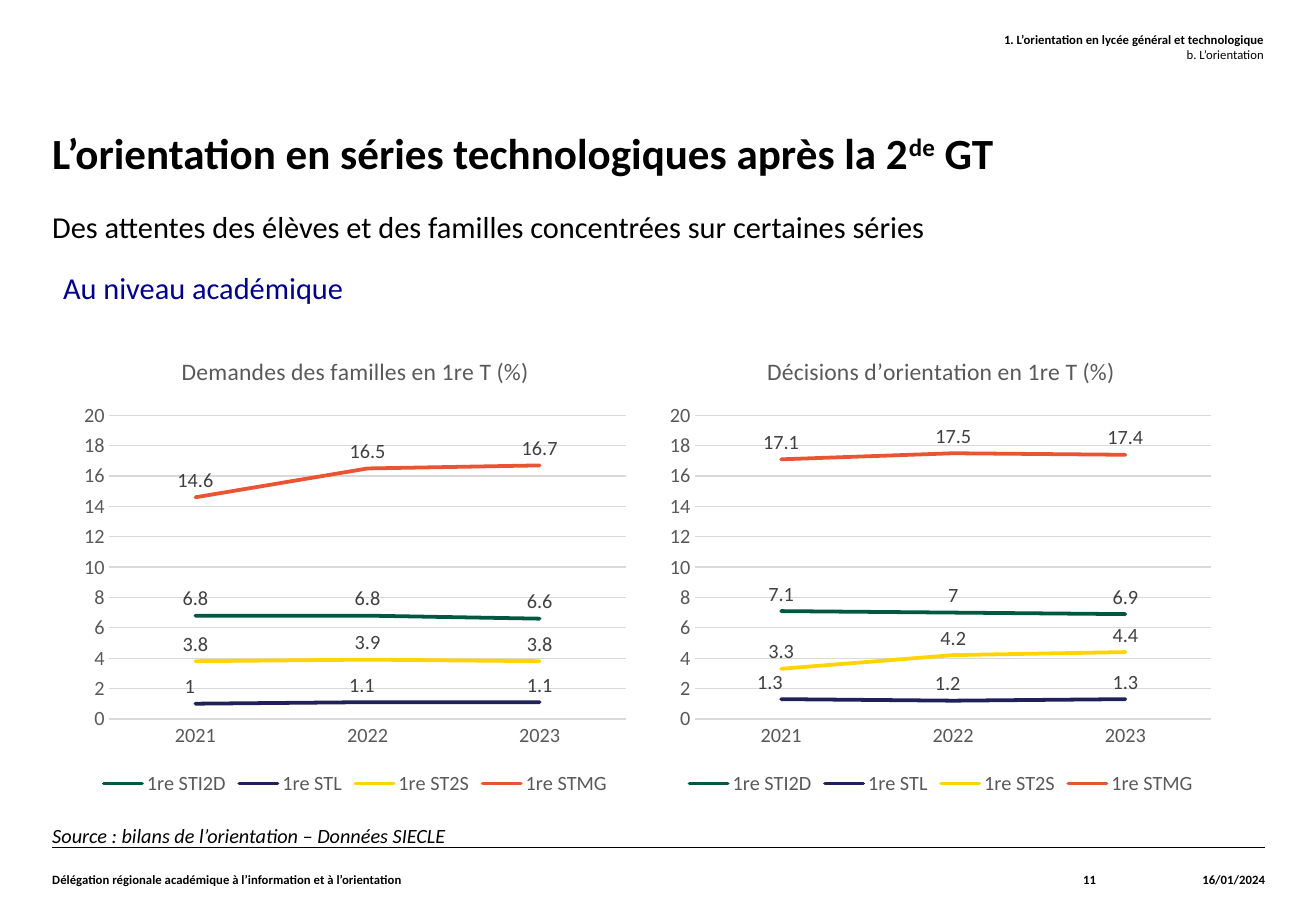
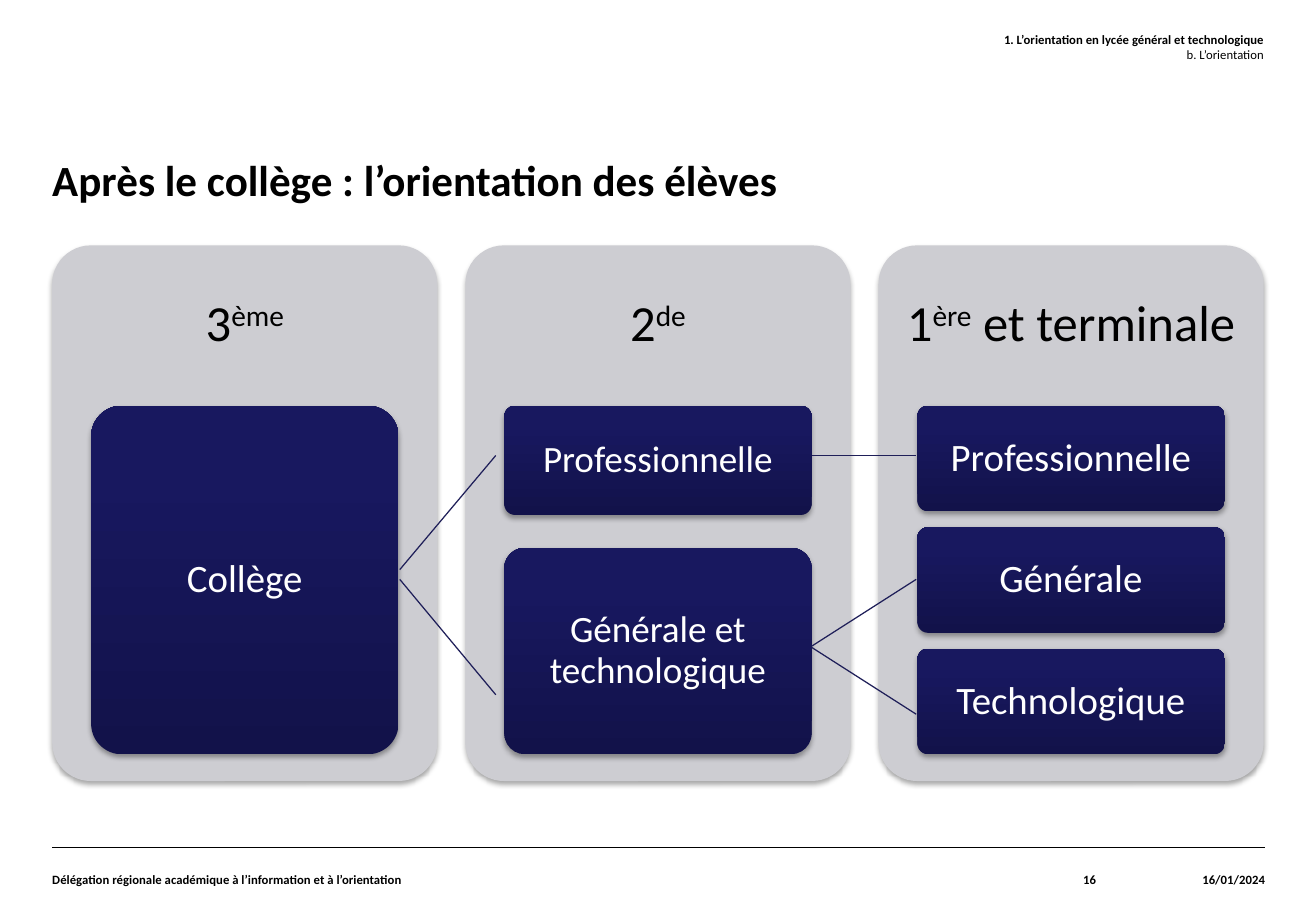
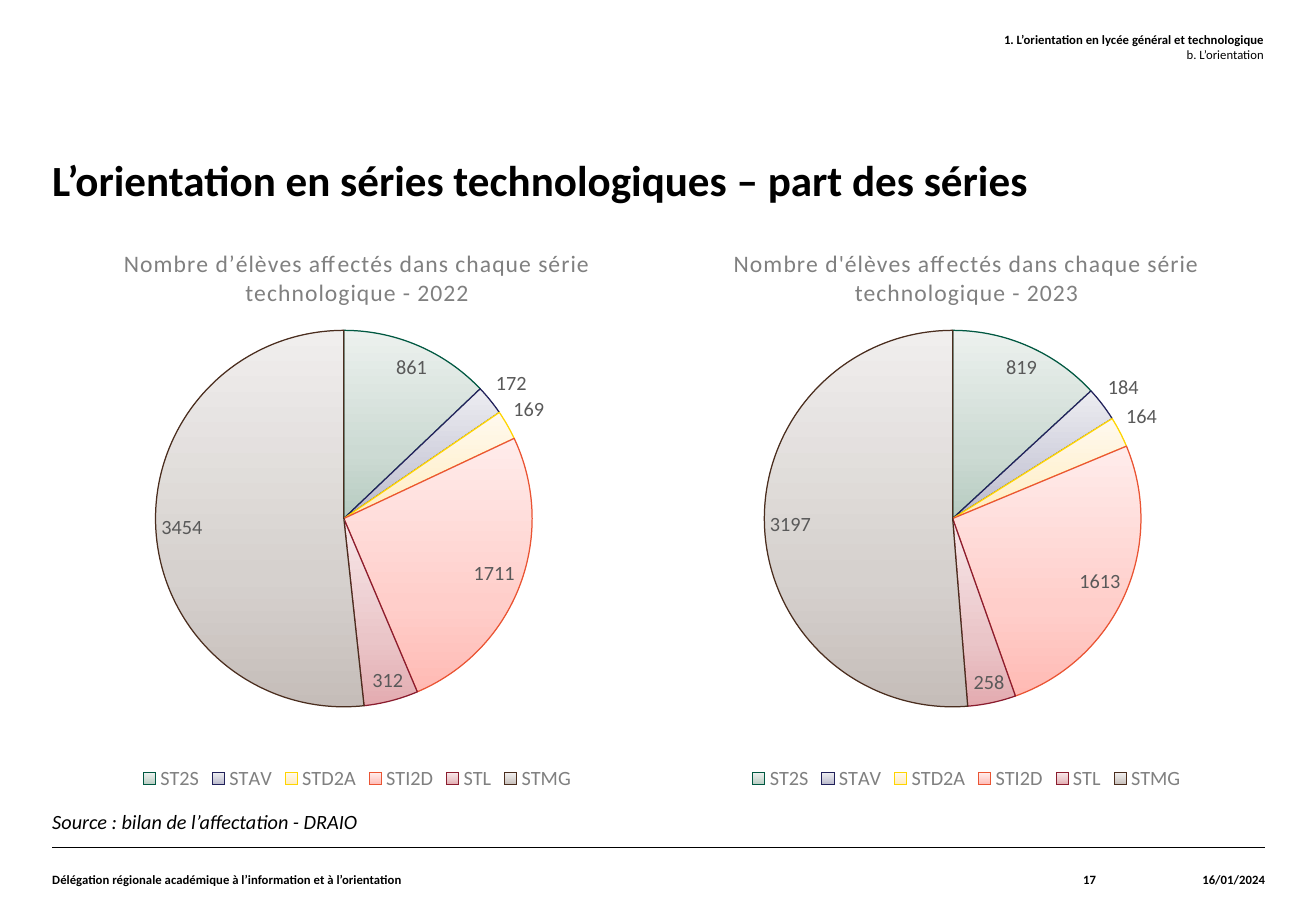
import pptx
import pptx.chart.data
import pptx.dml.color
import pptx.enum.chart
import pptx.enum.shapes
import pptx.enum.text
import pptx.oxml
import pptx.util
from dataclasses import dataclass
from lxml import etree
from pptx.util import Inches

LEFT = pptx.enum.text.PP_ALIGN.LEFT
CENTER = pptx.enum.text.PP_ALIGN.CENTER
RIGHT = pptx.enum.text.PP_ALIGN.RIGHT
TOP = pptx.enum.text.MSO_ANCHOR.TOP
MIDDLE = pptx.enum.text.MSO_ANCHOR.MIDDLE
DRAWING = "http://schemas.openxmlformats.org/drawingml/2006/main"
CHART = "http://schemas.openxmlformats.org/drawingml/2006/chart"


@dataclass(frozen=True)
class Theme:
    font: str = "Calibri"
    black: str = "000000"
    white: str = "FFFFFF"
    blue: str = "000091"
    panel: str = "CDCDD2"
    link: str = "1F1F59"
    axis: str = "595959"
    label: str = "404040"
    grid: str = "D9D9D9"
    soft: str = "808080"
    box: tuple = ((0, "12124A"), (80, "18185F"), (100, "161661"))
    series: tuple = ("005841", "21215A", "FFD500", "EA5433")
    slices: tuple = (
        ("005841", "B6CBC0", "CCDAD3", "ECF1EE"),
        ("21215A", "B7B7CA", "CDCDDA", "ECECF1"),
        ("FFD500", "FFEBBD", "FFF1D1", "FFF9EE"),
        ("EA5433", "FFBAB4", "FFCECA", "FFECEB"),
        ("8A1C2E", "E3ABB0", "EAC5C8", "F8E8EA"),
        ("4A2D1E", "C5BDB9", "D6D1CE", "F0EEED"),
    )
    title_size: float = 25.5
    heading_size: float = 30
    body_size: float = 18
    chart_title_size: float = 14
    small_size: float = 12
    footer_size: float = 7.5


def rgb(color):
    return pptx.dml.color.RGBColor.from_string(color)


def set_gradient_stops(stop_list, stops):
    for stop in list(stop_list):
        stop_list.remove(stop)
    for position, color in stops:
        stop = etree.SubElement(stop_list, f"{{{DRAWING}}}gs", pos=str(position * 1000))
        etree.SubElement(stop, f"{{{DRAWING}}}srgbClr", val=color)


def manual_layout(**values):
    entries = "".join(f'<c:{key} val="{value}"/>' for key, value in values.items())
    return pptx.oxml.parse_xml(
        f'<c:layout xmlns:c="{CHART}"><c:manualLayout>{entries}</c:manualLayout></c:layout>')


class Deck:
    left, width = 0.43, 9.98

    def __init__(self, theme):
        self.theme = theme
        self.presentation = pptx.Presentation()
        self.presentation.slide_width = Inches(10.83)
        self.presentation.slide_height = Inches(7.5)
        self.slide = None

    def style(self, font, size, color, bold=False, italic=False):
        font.name = self.theme.font
        font.size = pptx.util.Pt(size)
        font.color.rgb = rgb(color)
        font.bold = bold
        font.italic = italic

    def add_runs(self, paragraph, runs, size, color, bold=False, italic=False):
        for text in runs:
            raised = text.startswith("^")
            run = paragraph.add_run()
            run.text = text.removeprefix("^")
            self.style(run.font, size, color, bold, italic)
            if raised:
                run._r.get_or_add_rPr().set("baseline", "30000")

    def frame(self, shape, margins, anchor):
        text_frame = shape.text_frame
        text_frame.word_wrap = True
        text_frame.vertical_anchor = anchor
        text_frame.margin_left = text_frame.margin_right = Inches(margins[0])
        text_frame.margin_top = text_frame.margin_bottom = Inches(margins[1])
        return text_frame.paragraphs[0]

    def text(self, place, runs, size, color=None, bold=False, italic=False,
             align=LEFT, anchor=TOP, margins=(0, 0), spacing=1.0):
        shape = self.slide.shapes.add_textbox(*map(Inches, place))
        paragraph = self.frame(shape, margins, anchor)
        paragraph.alignment = align
        paragraph.line_spacing = spacing
        self.add_runs(paragraph, runs, size, color or self.theme.black, bold, italic)
        return shape

    def line(self, start, end, color, width=0.75):
        connector = self.slide.shapes.add_connector(
            pptx.enum.shapes.MSO_CONNECTOR.STRAIGHT, *map(Inches, (*start, *end)))
        connector.line.color.rgb = rgb(color)
        connector.line.width = pptx.util.Pt(width)
        etree.SubElement(connector.element.spPr, f"{{{DRAWING}}}effectLst")

    def page(self, number, title, title_top=1.31):
        theme = self.theme
        self.slide = self.presentation.slides.add_slide(self.presentation.slide_layouts[6])
        self.line((self.left, 6.98), (self.left + self.width, 6.98), theme.black, 0.8)
        self.text((self.left, title_top, self.width, 0.5), title, theme.title_size,
                  bold=True, spacing=0.9)
        header = self.text((3.92, 0.26, 6.48, 0.52),
                           ["1. L’orientation en lycée général et technologique"],
                           theme.footer_size, bold=True, align=RIGHT)
        paragraph = header.text_frame.add_paragraph()
        paragraph.alignment = RIGHT
        self.add_runs(paragraph, ["b. L’orientation"], theme.footer_size, theme.black)
        footer = (
            (self.left, 6.99, "Délégation régionale académique à l’information et à l’orientation", LEFT),
            (7.42, 1.6, str(number), RIGHT),
            (9.02, 1.39, "16/01/2024", RIGHT),
        )
        for left, width, words, align in footer:
            self.text((left, 6.98, width, 0.52), [words], theme.footer_size,
                      bold=True, align=align, anchor=MIDDLE)

    def source(self, top, words):
        self.text((self.left, top, self.width, 0.32), [words],
                  self.theme.small_size, italic=True)

    def rounded(self, place):
        shape = self.slide.shapes.add_shape(
            pptx.enum.shapes.MSO_SHAPE.ROUNDED_RECTANGLE, *map(Inches, place))
        shape.adjustments[0] = 0.1
        shape.line.fill.background()
        shape.shadow.inherit = False
        effects = shape.element.spPr.find(f"{{{DRAWING}}}effectLst")
        shadow = etree.SubElement(effects, f"{{{DRAWING}}}outerShdw", blurRad="40000",
                                  dist="23000", dir="5400000", rotWithShape="0")
        color = etree.SubElement(shadow, f"{{{DRAWING}}}srgbClr", val=self.theme.black)
        etree.SubElement(color, f"{{{DRAWING}}}alpha", val="35000")
        return shape

    def panel(self, left, top, heading):
        shape = self.rounded((left, top, 3.17, 4.41))
        shape.fill.solid()
        shape.fill.fore_color.rgb = rgb(self.theme.panel)
        self.text((left, top, 3.17, 1.32), heading, self.theme.heading_size, align=CENTER,
                  anchor=MIDDLE, margins=(0.12, 0.12), spacing=0.9)

    def box(self, place, words, size):
        shape = self.rounded(place)
        shape.fill.gradient()
        shape.fill.gradient_angle = 90
        set_gradient_stops(shape.element.spPr.xpath(".//a:gsLst")[0], self.theme.box)
        paragraph = self.frame(shape, (0.06, 0.05), MIDDLE)
        paragraph.alignment = CENTER
        paragraph.line_spacing = 0.9
        self.add_runs(paragraph, [words], size, self.theme.white)

    def chart(self, kind, place, plot_place, title, categories, series, color):
        theme = self.theme
        data = pptx.chart.data.CategoryChartData()
        data.categories = categories
        for name, values in series:
            data.add_series(name, values)
        chart = self.slide.shapes.add_chart(kind, *map(Inches, place), data).chart
        chart.font.name = theme.font
        chart.font.size = pptx.util.Pt(10)
        chart.has_title = True
        self.add_runs(chart.chart_title.text_frame.paragraphs[0], [title],
                      theme.chart_title_size, color)
        chart.has_legend = True
        chart.legend.position = pptx.enum.chart.XL_LEGEND_POSITION.BOTTOM
        chart.legend.include_in_layout = False
        self.style(chart.legend.font, theme.small_size, color)
        left, top, width, height = plot_place
        plot_area = chart.element.xpath(".//c:plotArea")[0]
        for layout in plot_area.findall(f"{{{CHART}}}layout"):
            plot_area.remove(layout)
        plot_area.insert(0, manual_layout(
            layoutTarget="inner", xMode="edge", yMode="edge",
            x=left / place[2], y=top / place[3], w=width / place[2], h=height / place[3]))
        return chart

    def labels(self, labels, color, position):
        labels.show_value = True
        labels.position = position
        self.style(labels.font, self.theme.small_size, color)

    def line_chart(self, left, title, series, shifts):
        theme = self.theme
        chart = self.chart(pptx.enum.chart.XL_CHART_TYPE.LINE, (left, 2.76, 4.65, 3.83),
                           (0.3, 0.66, 4.25, 2.5), title, ("2021", "2022", "2023"),
                           series, theme.axis)
        chart.plots[0].vary_by_categories = False
        no_tick = pptx.enum.chart.XL_TICK_MARK.NONE
        value_axis, category_axis = chart.value_axis, chart.category_axis
        for axis in (value_axis, category_axis):
            axis.major_tick_mark = axis.minor_tick_mark = no_tick
            self.style(axis.tick_labels.font, theme.small_size, theme.axis)
        value_axis.minimum_scale, value_axis.maximum_scale = 0, 20
        value_axis.major_unit = 2
        value_axis.format.line.fill.background()
        for rule in (value_axis.major_gridlines, category_axis):
            rule.format.line.color.rgb = rgb(theme.grid)
            rule.format.line.width = pptx.util.Pt(0.75)
        above = pptx.enum.chart.XL_LABEL_POSITION.ABOVE
        for item, color in zip(chart.plots[0].series, theme.series):
            item.smooth = False
            item.format.line.color.rgb = rgb(color)
            item.format.line.width = pptx.util.Pt(2.25)
            self.labels(item.data_labels, theme.label, above)
        for outline in chart.element.xpath(".//c:ser/c:spPr/a:ln"):
            outline.set("cap", "rnd")
        for index, shift in enumerate(shifts):
            label = chart.plots[0].series[1].points[index].data_label
            self.style(label.font, theme.small_size, theme.label)
            label.position = above
            chart.element.xpath(".//c:dLbl")[index].insert(1, manual_layout(x=shift, y=0))

    def pie_chart(self, left, width, plot_left, title, values):
        theme = self.theme
        chart = self.chart(pptx.enum.chart.XL_CHART_TYPE.PIE, (left, 1.85, width, 4.7),
                           (plot_left, 0.87, 3.1, 3.1), title,
                           ("ST2S", "STAV", "STD2A", "STI2D", "STL", "STMG"),
                           [("Series 1", values)], theme.soft)
        for run in chart.chart_title.text_frame.paragraphs[0].runs:
            run._r.get_or_add_rPr().set("spc", "50")
        chart.plots[0].vary_by_categories = True
        pie = chart.plots[0].series[0]
        self.labels(pie.data_labels, theme.axis,
                    pptx.enum.chart.XL_LABEL_POSITION.BEST_FIT)
        for index, (outline, *shades) in enumerate(theme.slices):
            style = pie.points[index].format
            style.fill.gradient()
            style.fill.gradient_angle = 90
            set_gradient_stops(chart.element.xpath(".//c:dPt//a:gsLst")[index],
                               zip((0, 35, 100), shades))
            style.line.color.rgb = rgb(outline)
            style.line.width = pptx.util.Pt(0.75)


def trends_slide(deck):
    theme = deck.theme
    deck.page(11, ["L’orientation en séries technologiques après la 2", "^de", " GT"], 1.09)
    deck.text((deck.left, 1.71, deck.width, 0.33),
              ["Des attentes des élèves et des familles concentrées sur certaines séries"],
              theme.body_size)
    deck.text((0.42, 2.17, 3.65, 0.4), ["Au niveau académique"], theme.body_size,
              theme.blue, margins=(0.1, 0.05))
    names = ("1re STI2D", "1re STL", "1re ST2S", "1re STMG")
    requests = ((6.8, 6.8, 6.6), (1, 1.1, 1.1), (3.8, 3.9, 3.8), (14.6, 16.5, 16.7))
    decisions = ((7.1, 7, 6.9), (1.3, 1.2, 1.3), (3.3, 4.2, 4.4), (17.1, 17.5, 17.4))
    deck.line_chart(0.6, "Demandes des familles en 1re T (%)",
                    list(zip(names, requests)), (-0.01, -0.01))
    deck.line_chart(5.42, "Décisions d’orientation en 1re T (%)",
                    list(zip(names, decisions)), (-0.02, -0.01))
    deck.source(6.78, "Source : bilans de l’orientation – Données SIECLE")


def pathways_slide(deck):
    deck.page(16, ["Après le collège : l’orientation des élèves"])
    columns = (
        (["3", "^ème"], 23, 0, [("Collège", 2.87)]),
        (["2", "^de"], 22, 0.27, [("Professionnelle", 0.9), ("Générale et technologique", 1.7)]),
        (["1", "^ère", " et terminale"], 23, 0.13,
         [("Professionnelle", 0.87), ("Générale", 0.87), ("Technologique", 0.87)]),
    )
    for index, (heading, size, gap, boxes) in enumerate(columns):
        left = deck.left + index * 3.4
        deck.panel(left, 2.02, heading)
        top = 3.34
        for words, height in boxes:
            deck.box((left + 0.32, top, 2.53, height), words, size)
            top += height + gap
    links = (
        ((3.29, 4.69), (4.08, 3.75)),
        ((3.29, 4.77), (4.08, 5.72)),
        ((6.68, 3.75), (7.54, 3.75)),
        ((6.68, 5.32), (7.54, 4.77)),
        ((6.68, 5.33), (7.54, 5.88)),
    )
    for start, end in links:
        deck.line(start, end, deck.theme.link)


def shares_slide(deck):
    deck.page(17, ["L’orientation en séries technologiques – part des séries"])
    deck.source(6.66, "Source : bilan de l’affectation - DRAIO")
    deck.pie_chart(0.46, 4.96, 0.82,
                   "Nombre d’élèves affectés dans chaque série technologique - 2022",
                   (861, 172, 169, 1711, 312, 3454))
    deck.pie_chart(4.87, 6.17, 1.42,
                   "Nombre d'élèves affectés dans chaque série technologique - 2023",
                   (819, 184, 164, 1613, 258, 3197))


def main():
    deck = Deck(Theme())
    trends_slide(deck)
    pathways_slide(deck)
    shares_slide(deck)
    deck.presentation.save("out.pptx")


if __name__ == "__main__":
    main()
